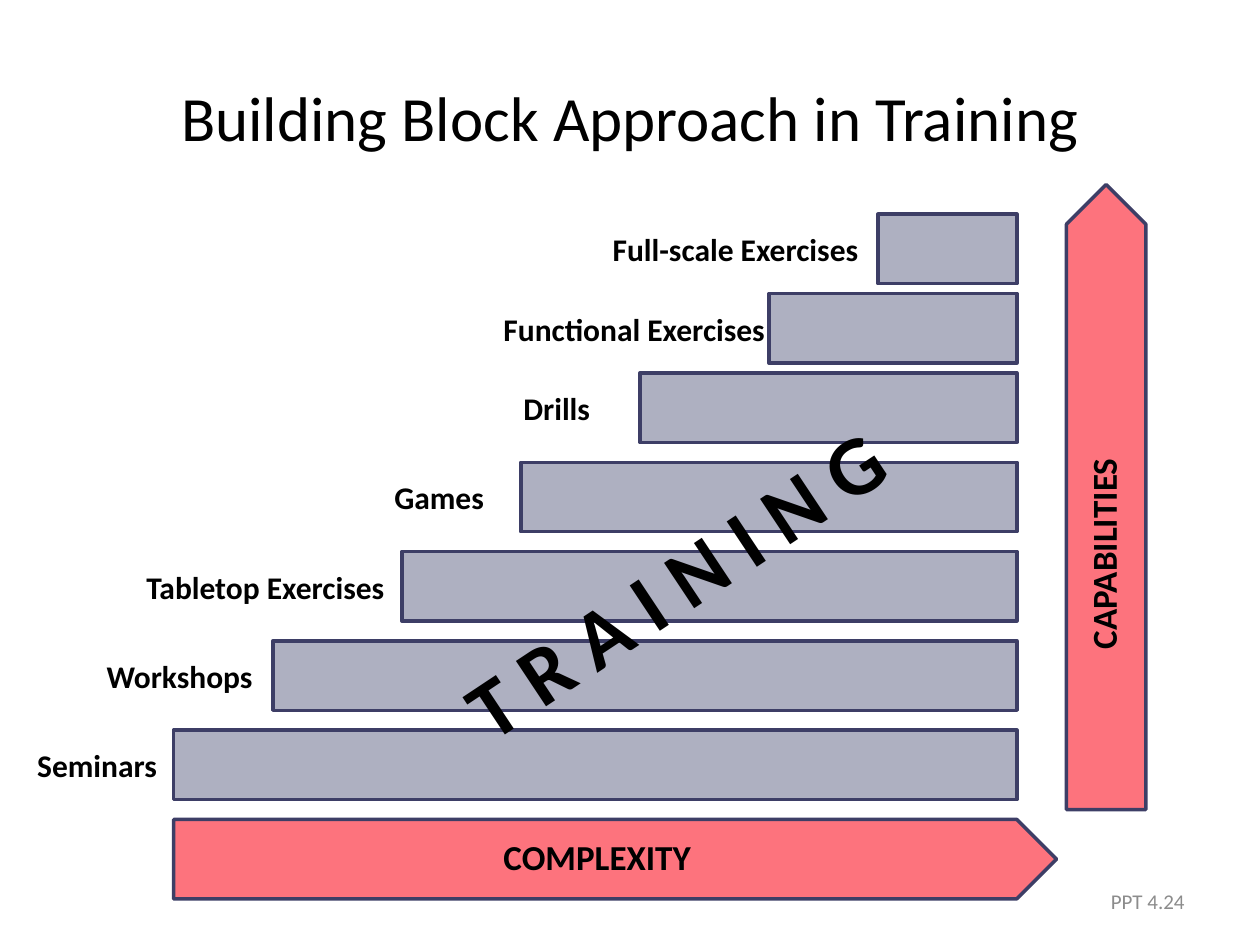
from dataclasses import dataclass

from pptx import Presentation
from pptx.dml.color import RGBColor
from pptx.enum.shapes import MSO_SHAPE
from pptx.enum.text import MSO_ANCHOR, MSO_AUTO_SIZE, PP_ALIGN
from pptx.util import Inches, Mm, Pt

BAR, ARROW = MSO_SHAPE.RECTANGLE, MSO_SHAPE.PENTAGON
TOP, MIDDLE = MSO_ANCHOR.TOP, MSO_ANCHOR.MIDDLE
LEFT, CENTER, RIGHT = PP_ALIGN.LEFT, PP_ALIGN.CENTER, PP_ALIGN.RIGHT
GROW, FIXED = MSO_AUTO_SIZE.SHAPE_TO_FIT_TEXT, MSO_AUTO_SIZE.NONE
TITLE_ONLY = 5
CELL = 2  # grid cell in millimetres


@dataclass(frozen=True)
class Theme:
    font: str = "Calibri"
    ink: str = "000000"
    muted: str = "8C8C8C"
    edge: str = "3D3E66"
    bar: str = "AEB0C1"
    arrow: str = "FD737D"
    title: int = 36
    label: int = 18
    axis: int = 20
    banner: int = 48
    note: int = 12
    line: int = 2


def color(code):
    return RGBColor.from_string(code)


def write(frame, text, *, font, size, ink, bold=False, align=LEFT,
          anchor=TOP, fit=GROW):
    frame.word_wrap = True
    frame.auto_size = fit
    frame.vertical_anchor = anchor
    para = frame.paragraphs[0]
    para.alignment = align
    run = para.add_run()
    run.text = text
    run.font.name = font
    run.font.size = Pt(size)
    run.font.bold = bold
    run.font.color.rgb = color(ink)


class Canvas:
    """Style and current slide; all places are (column, row, columns, rows)."""

    def __init__(self, slide, theme):
        self.slide, self.theme = slide, theme

    def grid(self, *cells):
        return [Mm(cell * CELL) for cell in cells]

    def title(self, text, place):
        head = self.slide.shapes.title
        head.left, head.top, head.width, head.height = self.grid(*place)
        write(head.text_frame, text, font=self.theme.font,
              size=self.theme.title, ink=self.theme.ink,
              align=CENTER, anchor=MIDDLE, fit=FIXED)

    def block(self, kind, place, fill, turn=0):
        shape = self.slide.shapes.add_shape(kind, *self.grid(*place))
        shape.rotation = turn
        shape.shadow.inherit = False
        shape.fill.solid()
        shape.fill.fore_color.rgb = color(fill)
        shape.line.color.rgb = color(self.theme.edge)
        shape.line.width = Pt(self.theme.line)

    def text(self, text, place, size, turn=0, **style):
        box = self.slide.shapes.add_textbox(*self.grid(*place))
        box.rotation = turn
        look = {"ink": self.theme.ink, "bold": True, **style}
        write(box.text_frame, text, font=self.theme.font, size=size, **look)


# Steps from bottom to top: label, its column and width, column of the bar
STEPS = [
    ("Seminars", 2.5, 15, 17.5),
    ("Workshops", 9.5, 18, 27.5),
    ("Tabletop Exercises", 13.5, 28, 40.5),
    ("Games", 38.5, 15, 52.5),
    ("Drills", 51.5, 15, 64.5),
    ("Functional Exercises", 49.5, 29, 77.5),
    ("Full-scale Exercises", 60.5, 30, 88.5),
]
BASE, EDGE = 73.6, 102.5  # row of the lowest bar, right edge of all bars
PITCH, TIGHT = 9, 8       # the two top steps sit closer together
TALL = 7


def step_row(index):
    near = max(0, index - 4)
    return BASE - (index - near) * PITCH - near * TIGHT


def main():
    deck = Presentation()
    deck.slide_width, deck.slide_height = Inches(10), Inches(7.5)
    theme = Theme()
    slide = deck.slides.add_slide(deck.slide_layouts[TITLE_ONLY])
    page = Canvas(slide, theme)

    # Title and page note
    page.title("Building Block Approach in Training",
               (6.35, 3.81, 114.3, 15.88))
    page.text("PPT 4.24", (91.06, 88.27, 29.6, 5.08), theme.note,
              ink=theme.muted, bold=False, align=RIGHT, anchor=MIDDLE,
              fit=FIXED)

    # Axis arrows
    page.block(ARROW, (17.5, BASE + PITCH, 89, 8), theme.arrow)
    page.block(ARROW, (80, 46.1, 63, 8), theme.arrow, turn=270)

    # Staircase of bars, then its labels
    for index, (name, col, wide, start) in enumerate(STEPS):
        page.block(BAR, (start, step_row(index), EDGE - start, TALL),
                   theme.bar)
    for index, (name, col, wide, start) in enumerate(STEPS):
        page.text(name, (col, step_row(index) + 1, wide, 5.13), theme.label)

    # Axis names and banner
    page.text("COMPLEXITY", (49.5, BASE + PITCH + 1, 25, 5.56), theme.axis)
    page.text("CAPABILITIES", (93.7, 46.4, 35, 5.56), theme.axis, turn=270)
    page.text("T R A I N I N G", (41.4, 49.4, 63.9, 11.55), theme.banner,
              turn=326.4)

    deck.save("out.pptx")


if __name__ == "__main__":
    main()
